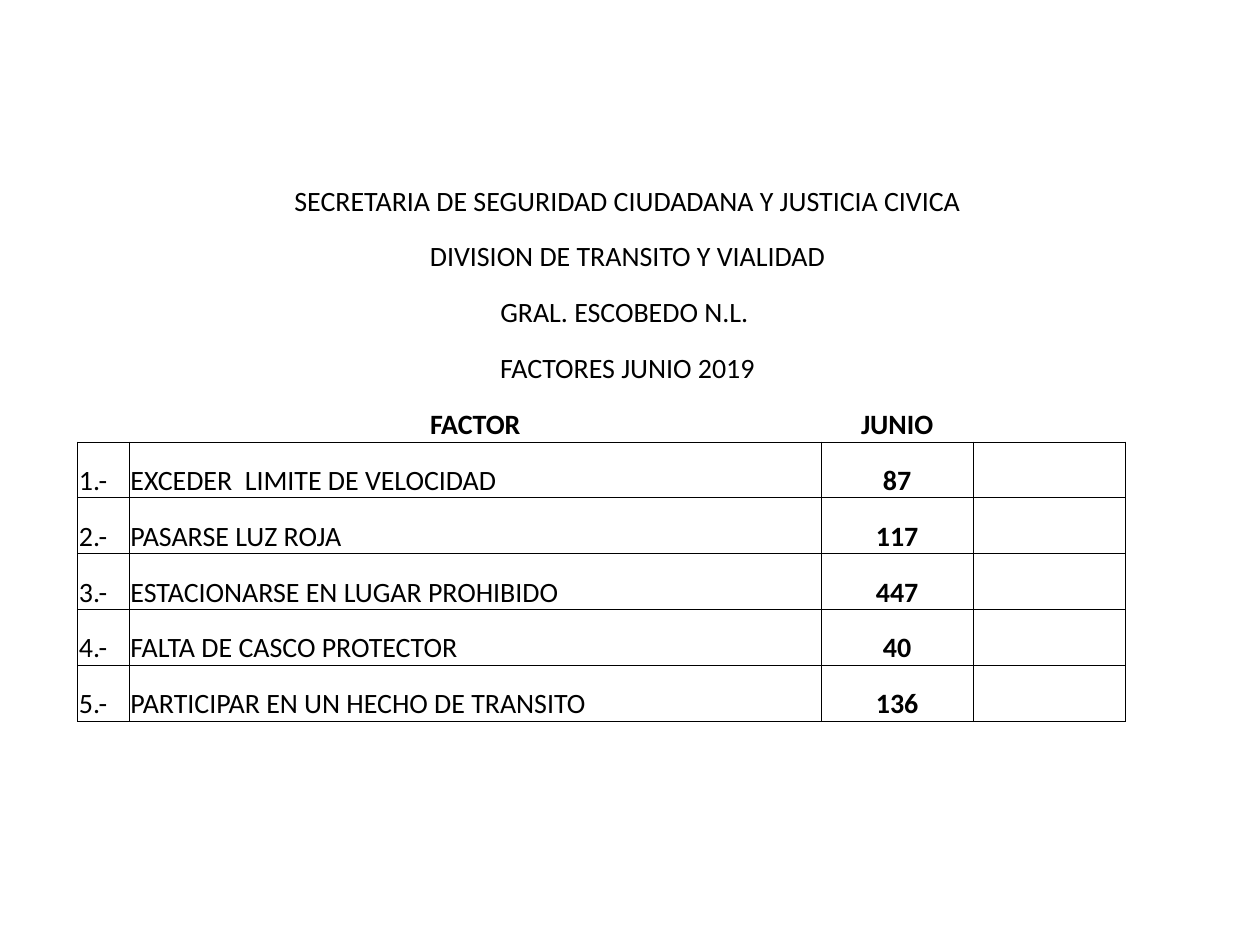
"""Build a slide with a table of traffic accident factors for June 2019."""
from dataclasses import dataclass

from lxml.etree import SubElement
from pptx import Presentation
from pptx.dml.color import RGBColor
from pptx.enum.text import MSO_ANCHOR, PP_ALIGN
from pptx.oxml.ns import qn
from pptx.table import Table, _Cell
from pptx.util import Cm, Pt

BLACK = "000000"
SIDES = ("L", "R", "T", "B")
COLUMN_WIDTHS = (1.04, 13.94, 3.07, 3.07)
HEADINGS = (
    "SECRETARIA DE SEGURIDAD CIUDADANA Y JUSTICIA CIVICA",
    "DIVISION DE TRANSITO Y VIALIDAD",
    "GRAL. ESCOBEDO N.L. ",
    "FACTORES JUNIO 2019",
)


@dataclass
class Factor:
    name: str
    count: int


FACTORS = (
    Factor("EXCEDER  LIMITE DE VELOCIDAD", 87),
    Factor("PASARSE LUZ ROJA", 117),
    Factor("ESTACIONARSE EN LUGAR PROHIBIDO", 447),
    Factor("FALTA DE CASCO PROTECTOR", 40),
    Factor("PARTICIPAR EN UN HECHO DE TRANSITO", 136),
)


def color(value: str) -> RGBColor:
    return RGBColor.from_string(value)


def set_borders(cell: _Cell, visible: str) -> None:
    properties = cell._tc.get_or_add_tcPr()
    for side in SIDES:
        line = SubElement(properties, qn(f"a:ln{side}"), w=str(Pt(0.5)))
        if side in visible:
            fill = SubElement(line, qn("a:solidFill"))
            SubElement(fill, qn("a:srgbClr"), val=BLACK)
        else:
            SubElement(line, qn("a:noFill"))


def format_cell(cell: _Cell, borders: str) -> None:
    set_borders(cell, borders)
    cell.fill.background()
    cell.vertical_anchor = MSO_ANCHOR.BOTTOM
    cell.margin_left = cell.margin_right = cell.margin_top = Cm(0.02)
    cell.margin_bottom = 0


def write_cell(cell: _Cell, text: str, centered: bool = False, bold: bool = False) -> None:
    cell.text_frame.text = text
    para = cell.text_frame.paragraphs[0]
    para.alignment = PP_ALIGN.CENTER if centered else PP_ALIGN.LEFT
    font = para.runs[0].font
    font.name = "Calibri"
    font.size = Pt(16)
    font.bold = bold
    font.color.rgb = color(BLACK)


def fill_table(table: Table) -> None:
    table.first_row = table.horz_banding = False
    for column, width in zip(table.columns, COLUMN_WIDTHS):
        column.width = Cm(width)

    header_row = len(HEADINGS)
    for index, row in enumerate(table.rows):
        borders = "" if index < header_row else "B" if index == header_row else "LRTB"
        for cell in row.cells:
            format_cell(cell, borders)

    for index, heading in enumerate(HEADINGS):
        table.cell(index, 1).merge(table.cell(index, 3))
        write_cell(table.cell(index, 1), heading, centered=True)

    for column, label in enumerate(("FACTOR", "JUNIO"), start=1):
        write_cell(table.cell(header_row, column), label, centered=True, bold=True)

    for number, factor in enumerate(FACTORS, start=1):
        row = header_row + number
        write_cell(table.cell(row, 0), f"{number}.-")
        write_cell(table.cell(row, 1), factor.name)
        write_cell(table.cell(row, 2), str(factor.count), centered=True, bold=True)


def main() -> None:
    deck = Presentation()
    deck.slide_width, deck.slide_height = Cm(25.4), Cm(19.05)
    page = deck.slides.add_slide(deck.slide_layouts[6])
    row_count = len(HEADINGS) + 1 + len(FACTORS)
    frame = page.shapes.add_table(
        row_count, len(COLUMN_WIDTHS), Cm(1.57), Cm(3.28), Cm(sum(COLUMN_WIDTHS)), Cm(11.26)
    )
    fill_table(frame.table)
    deck.save("out.pptx")


if __name__ == "__main__":
    main()
